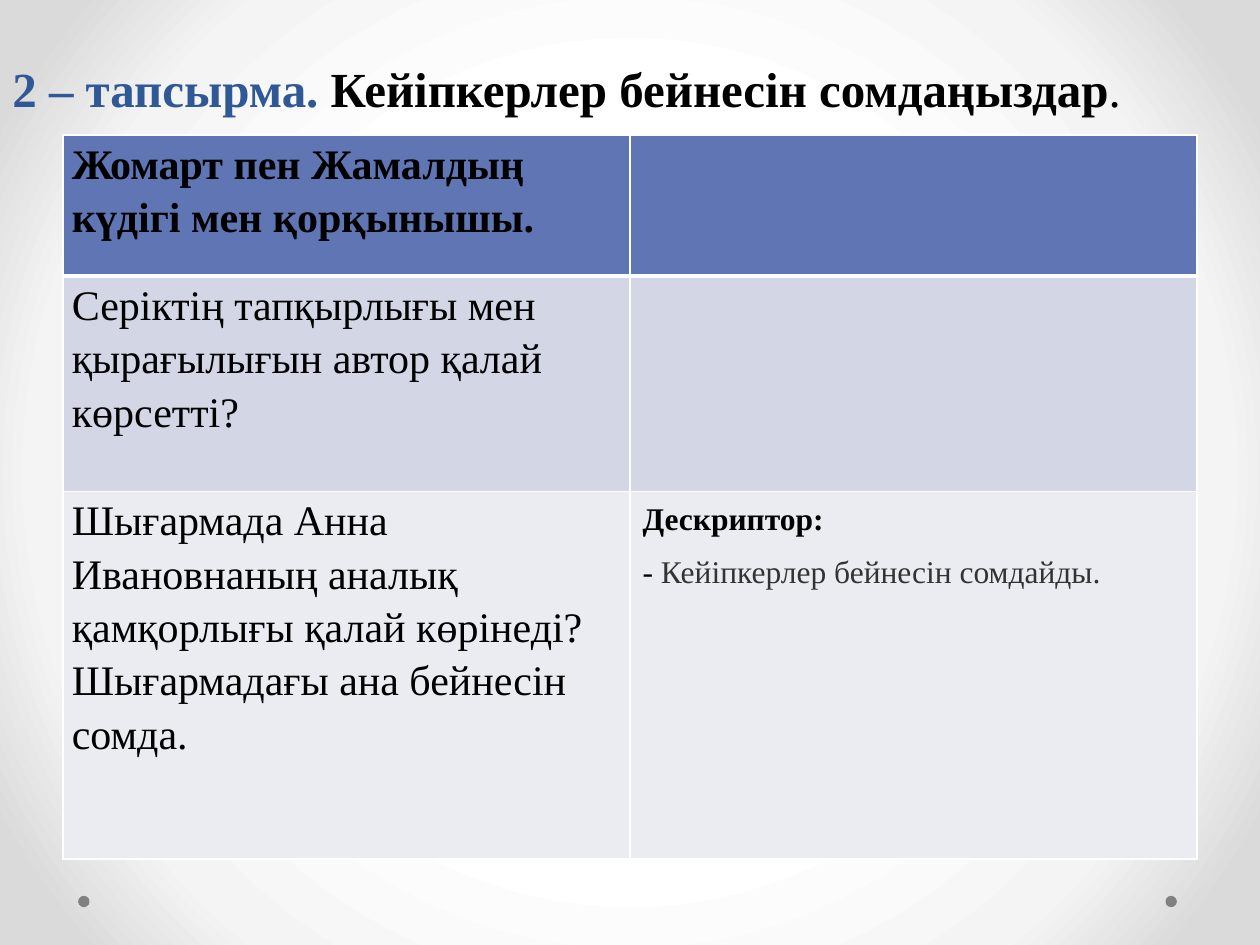
from lxml.etree import SubElement as Sub
from pptx import Presentation
from pptx.dml.color import RGBColor as RGB
from pptx.enum.shapes import MSO_SHAPE as Shape
from pptx.enum.text import MSO_ANCHOR as Anchor
from pptx.oxml import parse_xml
from pptx.oxml.ns import nsdecls, qn
from pptx.util import Inches, Pt

FONT = "Times New Roman"
HUES = {
    "white": "FFFFFF", "pale": "F4F4F4", "edge": "DADADA", "dot": "808080",
    "blue": "2F5897", "black": "000000", "gray": "333333",
    "head": "6076B4", "odd": "D2D6E5", "even": "EAECF2",
}


def hue(name):
    return RGB.from_string(HUES[name])


def write(para, parts, space=1.15, after=0):
    para.line_spacing = space
    para.space_before = Pt(0)
    para.space_after = Pt(after)
    for text, size, color, bold in parts:
        run = para.add_run()
        run.text = text
        font = run.font
        font.name, font.size, font.bold = FONT, Pt(size), bold
        font.color.rgb = hue(color)


def add_back(slide):
    slide.background.fill.gradient()
    old = slide.element.find(".//" + qn("a:gradFill"))
    stops = "".join(
        f'<a:gs pos="{pos}000"><a:srgbClr val="{HUES[name]}"/></a:gs>'
        for pos, name in ((50, "white"), (76, "pale"), (92, "edge")))
    new = parse_xml(
        f'<a:gradFill {nsdecls("a")} rotWithShape="1"><a:gsLst>{stops}</a:gsLst>'
        '<a:path path="circle"><a:fillToRect l="50000" t="50000" r="50000" b="50000"/>'
        '</a:path></a:gradFill>')
    old.getparent().replace(old, new)


def add_dots(slide, left, top, width, size):
    for x in (left, left + width - size):
        dot = slide.shapes.add_shape(
            Shape.OVAL, Inches(x), Inches(top), Inches(size), Inches(size))
        dot.shadow.inherit = False
        dot.fill.solid()
        dot.fill.fore_color.rgb = hue("dot")
        dot.line.fill.background()


def add_title(slide, left, top, width, height):
    box = slide.shapes.add_textbox(
        Inches(left), Inches(top), Inches(width), Inches(height))
    frame = box.text_frame
    frame.word_wrap = True
    frame.vertical_anchor = Anchor.MIDDLE
    write(frame.paragraphs[0], [
        ("2 – тапсырма. ", 28, "blue", True),
        ("Кейіпкерлер бейнесін сомдаңыздар", 28, "black", True),
        (".", 28, "black", False)])


def add_edges(cell, row):
    props = cell._tc.get_or_add_tcPr()
    thick = {"T": row == 1, "B": row == 0}
    for side in "LRTB":
        line = Sub(props, qn(f"a:ln{side}"), w=str(Pt(3 if thick.get(side) else 1)))
        fill = Sub(line, qn("a:solidFill"))
        Sub(fill, qn("a:srgbClr"), val=HUES["white"])


def add_grid(slide, left, top, width, rows):
    table = slide.shapes.add_table(
        len(rows), 2, Inches(left), Inches(top), Inches(width),
        Inches(sum(row[0] for row in rows))).table
    for col in table.columns:
        col.width = Inches(width / 2)
    for i, (height, color, *texts) in enumerate(rows):
        table.rows[i].height = Inches(height)
        for j, paras in enumerate(texts):
            cell = table.cell(i, j)
            add_edges(cell, i)
            cell.fill.solid()
            cell.fill.fore_color.rgb = hue(color)
            if j == 0:
                cell.margin_left = cell.margin_right = Inches(0.07)
                cell.margin_top = cell.margin_bottom = 0
            frame = cell.text_frame
            for k, (parts, space, after) in enumerate(paras):
                para = frame.add_paragraph() if k else frame.paragraphs[0]
                write(para, parts, space, after)


def ask(text, bold=False):
    return [(text, 24, "black", bold)], 1.15, 0


def main():
    deck = Presentation()
    deck.slide_width, deck.slide_height = Inches(10), Inches(7.5)
    slide = deck.slides.add_slide(deck.slide_layouts[6])
    add_back(slide)
    add_dots(slide, 0.62, 7.11, 8.72, 0.09)
    add_title(slide, 0, 0.34, 10, 0.65)
    add_grid(slide, 0.5, 1.07, 9, [
        (1.12, "head", [ask("Жомарт пен\u00a0Жамалдың күдігі мен қорқынышы.", True)], []),
        (1.71, "odd",
         [ask("Серіктің тапқырлығы мен қырағылығын автор қалай көрсетті?")], []),
        (2.92, "even",
         [ask("Шығармада Анна Ивановнаның аналық қамқорлығы қалай көрінеді?"),
          ask("Шығармадағы ана бейнесін сомда.")],
         [([("Дескриптор:", 18, "black", True)], 1.15, 10),
          ([("- ", 18, "black", False),
            ("Кейіпкерлер бейнесін сомдайды.", 18, "gray", False)], 1, 0)]),
    ])
    deck.save("out.pptx")


if __name__ == "__main__":
    main()
